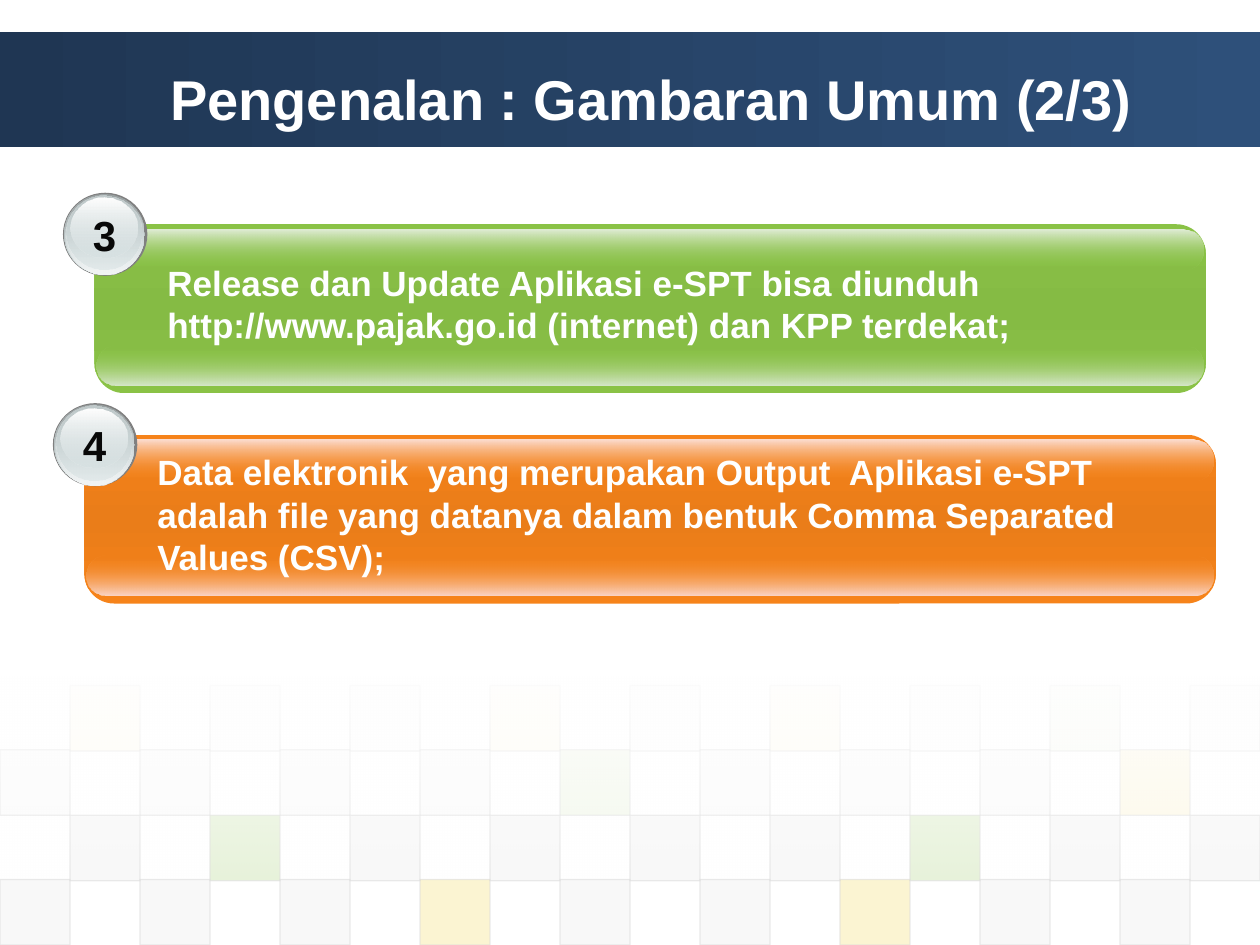
from pptx import Presentation
from pptx.dml.color import RGBColor
from pptx.enum.shapes import MSO_SHAPE
from pptx.enum.text import MSO_ANCHOR, MSO_AUTO_SIZE, PP_ALIGN
from pptx.oxml import parse_xml
from pptx.oxml.ns import nsdecls
from pptx.util import Inches, Pt


def add_painted(shapes, kind, left, top, width, height, stops, angle=90):
    shape = shapes.add_shape(kind, Inches(left), Inches(top), Inches(width), Inches(height))
    shape.shadow.inherit = False
    shape.line.fill.background()
    shape.fill.background()
    colours = [
        f'<a:srgbClr val="{colour}"><a:alpha val="{alpha * 1000}"/></a:srgbClr>'
        for position, colour, alpha in stops
    ]
    if len(stops) == 1:
        xml = f'<a:solidFill {nsdecls("a")}>{colours[0]}</a:solidFill>'
    else:
        marks = "".join(
            f'<a:gs pos="{stop[0] * 1000}">{colour}</a:gs>' for stop, colour in zip(stops, colours)
        )
        xml = (
            f'<a:gradFill {nsdecls("a")} rotWithShape="1"><a:gsLst>{marks}</a:gsLst>'
            f'<a:lin ang="{angle * 60000}" scaled="0"/></a:gradFill>'
        )
    properties = shape.element.spPr
    properties.replace(properties.find("{*}noFill"), parse_xml(xml))
    return shape


def write(box, text, size, colour, alignment=PP_ALIGN.LEFT):
    box.text_frame.text = text
    box.text_frame.word_wrap = True
    para = box.text_frame.paragraphs[0]
    para.alignment = alignment
    span = para.runs[0]
    span.font.name = "Arial"
    span.font.size = Pt(size)
    span.font.bold = True
    span.font.color.rgb = RGBColor.from_string(colour)


deck = Presentation()
deck.slide_width = Inches(10)
deck.slide_height = Inches(7.5)
page = deck.slides.add_slide(deck.slide_layouts[5])

add_painted(page.shapes, MSO_SHAPE.RECTANGLE, 0, 0.25, 10, 0.92,
            [(0, "1F3653", 100), (100, "2E507A", 100)], angle=0)

GREEN, YELLOW, GREY, PALE = "8AC246", "EFC821", "DDDDDD", "EAEAEA"
tile_rows = [
    (5.44, 1, 5, {1: YELLOW, 3: PALE, 5: PALE, 7: YELLOW, 11: YELLOW, 13: PALE, 15: GREEN, 17: PALE}),
    (5.95, 0, 10, {8: GREEN, 16: YELLOW}),
    (6.47, 1, 20, {3: GREEN, 13: GREEN}),
    (6.98, 0, 20, {6: YELLOW, 12: YELLOW}),
]
tile_pitch = 10 / 18
for top, first_column, alpha, accents in tile_rows:
    for column in range(first_column, 18, 2):
        tile = add_painted(page.shapes, MSO_SHAPE.RECTANGLE, column * tile_pitch, top, tile_pitch, 0.52,
                           [(0, accents.get(column, GREY), alpha)])
        tile.line.color.rgb = RGBColor.from_string(GREY)
        tile.line.width = Pt(0.75)
        line_colour = tile.line.fill.fore_color and tile.element.spPr.find("{*}ln/{*}solidFill/{*}srgbClr")
        line_colour.append(parse_xml(f'<a:alpha {nsdecls("a")} val="60000"/>'))

add_painted(page.shapes, MSO_SHAPE.RECTANGLE, 0, 5.37, 10, 1.62,
            [(0, "FFFFFF", 90), (100, "FFFFFF", 0)])

title = page.shapes.title
title.left, title.top, title.width, title.height = Inches(1.25), Inches(0.29), Inches(9.5), Inches(0.97)
write(title, "Pengenalan : Gambaran Umum (2/3)", 32, "FFFFFF")
title.text_frame.vertical_anchor = MSO_ANCHOR.MIDDLE
title.element.getparent().append(title.element)

badge_layers = [
    (0, 0, 0.67, 0.66, [(0, "808080", 100)]),
    (0.01, 0.01, 0.64, 0.64, [(0, "99A1A2", 100), (100, "D6E1E2", 100)]),
    (0.02, 0.02, 0.62, 0.63, [(0, "D6E1E2", 0), (100, "F2F5F5", 100)]),
    (0.03, 0.02, 0.59, 0.59, [(0, "C1CBCC", 100), (100, "D6E1E2", 48)]),
    (0.06, 0.04, 0.53, 0.47, [(0, "FFFFFF", 100), (100, "D6E1E2", 38)]),
]
items = [
    ("3", 0.5, 1.53, 8.82, GREEN, "85BB44", "E1EDD8", "D9E8CE", 2.03, 8.26, 0.77,
     "Release dan Update Aplikasi e-SPT bisa diunduh http://www.pajak.go.id (internet) dan KPP terdekat;"),
    ("4", 0.42, 3.2, 8.98, "F6831A", "EA7D19", "FCE0D6", "FBD7CB", 3.53, 8.18, 1.11,
     "Data elektronik  yang merupakan Output  Aplikasi e-SPT adalah file yang datanya dalam bentuk "
     "Comma Separated Values (CSV);"),
]
for (number, left, top, width, colour, middle, top_glow, bottom_glow,
     text_top, text_width, text_height, text) in items:
    bar_left, bar_top = left + 0.25, top + 0.25
    bar_layers = [
        (0, 0, width, 1.34, 0.175, [(0, colour, 100), (50, middle, 100), (100, colour, 100)]),
        (0.02, 0.96, width - 0.04, 0.32, 0.5, [(0, colour, 0), (100, bottom_glow, 100)]),
        (0.02, 0.04, width - 0.04, 0.32, 0.5, [(0, top_glow, 100), (100, colour, 0)]),
    ]
    bar = page.shapes.add_group_shape()
    for across, down, layer_width, layer_height, rounding, stops in bar_layers:
        layer = add_painted(bar.shapes, MSO_SHAPE.ROUNDED_RECTANGLE, bar_left + across, bar_top + down,
                            layer_width, layer_height, stops)
        layer.adjustments[0] = rounding

    badge = page.shapes.add_group_shape()
    for across, down, layer_width, layer_height, stops in badge_layers:
        add_painted(badge.shapes, MSO_SHAPE.OVAL, left + across, top + down, layer_width, layer_height, stops)

    labels = [
        (left + 0.12, top + 0.08, 0.42, 0.5, number, 24, "080808", PP_ALIGN.CENTER),
        (left + 0.73, text_top, text_width, text_height, text, 20, "FEFFFF", PP_ALIGN.LEFT),
    ]
    for box_left, box_top, box_width, box_height, words, size, ink, alignment in labels:
        box = page.shapes.add_textbox(Inches(box_left), Inches(box_top), Inches(box_width), Inches(box_height))
        write(box, words, size, ink, alignment)
        box.text_frame.auto_size = MSO_AUTO_SIZE.SHAPE_TO_FIT_TEXT

deck.save("out.pptx")
